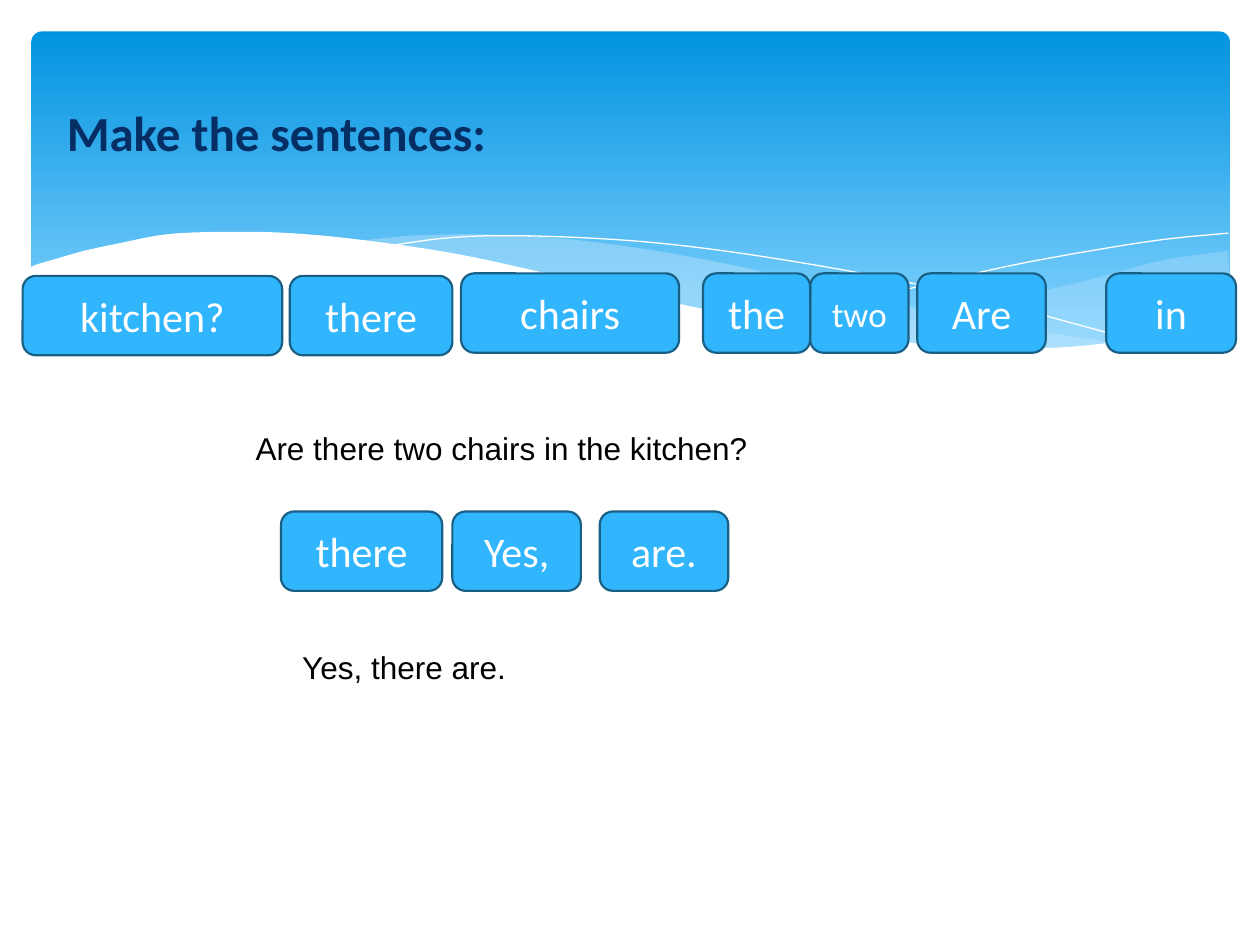
from lxml.etree import SubElement
from pptx import Presentation
from pptx.dml.color import RGBColor
from pptx.enum.shapes import MSO_SHAPE
from pptx.enum.text import MSO_ANCHOR, PP_ALIGN
from pptx.oxml.ns import qn
from pptx.util import Pt

PX = 9144  # EMU per px, 100 px to the inch

WHITE = RGBColor(0xFF, 0xFF, 0xFF)
BLACK = RGBColor(0x00, 0x00, 0x00)
NAVY = RGBColor(0x05, 0x2E, 0x65)
SKY_TOP = RGBColor(0x02, 0x93, 0xE0)
SKY_BOTTOM = RGBColor(0x83, 0xD3, 0xFE)
MIST = RGBColor(0xC6, 0xE7, 0xFC)
CARD_FILL = RGBColor(0x31, 0xB6, 0xFD)
CARD_LINE = RGBColor(0x19, 0x5F, 0x84)

CARD_HEIGHT = 63

# Waves as points relative to the banner's corner
RIGHT_RIBBON_TOP = [(950, 174), (896, 182), (836, 198), (754, 217), (704, 228), (636, 240)]
RIGHT_RIBBON_BOTTOM = [(636, 240), (693, 247), (756, 252), (810, 252), (856, 249),
                       (896, 240), (951, 222)]
LEFT_RIBBON_TOP = [(261, 166), (303, 162), (355, 161), (417, 164), (489, 173), (559, 186),
                   (604, 197), (681, 215), (782, 235), (868, 248)]
LEFT_RIBBON_BOTTOM = [(868, 248), (813, 253), (748, 252), (684, 247), (609, 236),
                      (541, 223), (466, 207), (424, 197), (358, 182), (298, 171), (261, 166)]
LONG_HAIRLINE = [(284, 170), (328, 164), (376, 162), (444, 164), (508, 169), (583, 179),
                 (670, 194), (735, 208), (806, 226), (882, 247)]
SHORT_HAIRLINE = [(588, 232), (647, 216), (723, 198), (781, 185), (841, 174), (899, 165),
                  (950, 160)]
FRONT_WAVE = [(952, 221), (885, 242), (812, 251), (736, 250), (663, 243), (578, 229),
              (504, 214), (422, 195), (340, 177), (267, 166), (205, 160), (152, 159),
              (107, 161), (70, 168), (42, 174), (21, 180), (4, 185), (-2, 188)]
FRONT_WAVE_FLOOR = [(-2, 304), (952, 304)]


def smooth(points, steps=6):
    """Sample a Catmull-Rom curve through the points."""
    padded = [points[0], *points, points[-1]]
    curve = []
    for p0, p1, p2, p3 in zip(padded, padded[1:], padded[2:], padded[3:]):
        for step in range(steps):
            t = step / steps
            curve.append(tuple(
                b + t * (c - a) / 2 + t**2 * (2 * a - 5 * b + 4 * c - d) / 2
                + t**3 * (3 * b - a - 3 * c + d) / 2
                for a, b, c, d in zip(p0, p1, p2, p3)))
    return curve + [points[-1]]


def add_wave(shapes, left, top, points, color, alpha=100, filled=True):
    emu = [(round((left + x) * PX), round((top + y) * PX)) for x, y in points]
    builder = shapes.build_freeform(*emu[0], scale=1.0)
    builder.add_line_segments(emu[1:], close=filled)
    wave = builder.convert_to_shape()
    wave.shadow.inherit = False
    if not filled:
        wave.fill.background()
        wave.line.color.rgb = color
        wave.line.width = 0
        return
    wave.fill.solid()
    wave.fill.fore_color.rgb = color
    wave.line.fill.background()
    if alpha < 100:
        srgb = wave.fill._xPr.find(qn("a:solidFill")).find(qn("a:srgbClr"))
        SubElement(srgb, qn("a:alpha"), val=str(alpha * 1000))


def add_banner(shapes, left, top, width, height):
    sky = shapes.add_shape(MSO_SHAPE.ROUNDED_RECTANGLE,
                           left * PX, top * PX, width * PX, height * PX)
    sky.adjustments[0] = 0.03
    sky.shadow.inherit = False
    sky.line.fill.background()
    sky.fill.gradient()
    sky.fill.gradient_angle = 270
    for stop, color, position in zip(sky.fill.gradient_stops, (SKY_TOP, SKY_BOTTOM), (0, 0.9)):
        stop.color.rgb = color
        stop.position = position

    # Translucent ribbons, hairlines, then the white wave in front
    add_wave(shapes, left, top, smooth(RIGHT_RIBBON_TOP) + smooth(RIGHT_RIBBON_BOTTOM), MIST, 29)
    add_wave(shapes, left, top, smooth(LEFT_RIBBON_TOP) + smooth(LEFT_RIBBON_BOTTOM), MIST, 40)
    for hairline in (LONG_HAIRLINE, SHORT_HAIRLINE):
        add_wave(shapes, left, top, smooth(hairline), WHITE, filled=False)
    add_wave(shapes, left, top, smooth(FRONT_WAVE) + FRONT_WAVE_FLOOR, WHITE)


def place_title(slide, left, top, width, height):
    title = slide.shapes.title
    title.left, title.top, title.width, title.height = (
        length * PX for length in (left, top, width, height))
    title.text_frame.text = "Make the sentences:"
    title.text_frame.word_wrap = False
    title.text_frame.vertical_anchor = MSO_ANCHOR.TOP
    heading = title.text_frame.paragraphs[0]
    heading.alignment = PP_ALIGN.LEFT
    heading.font.name, heading.font.size = "Calibri", Pt(28)
    heading.font.bold = True
    heading.font.color.rgb = NAVY
    # Bring the title in front of the banner
    slide.shapes._spTree.append(title._element)


def add_word_cards(shapes, left, top, cards):
    """Each card is (word, x, y, width, font size), relative to the row's corner."""
    for word, x, y, width, size in cards:
        card = shapes.add_shape(MSO_SHAPE.ROUNDED_RECTANGLE, (left + x) * PX, (top + y) * PX,
                                width * PX, CARD_HEIGHT * PX)
        card.shadow.inherit = False
        card.fill.solid()
        card.fill.fore_color.rgb = CARD_FILL
        card.line.color.rgb = CARD_LINE
        card.line.width = Pt(1.25)
        card.text_frame.text = word
        card.text_frame.vertical_anchor = MSO_ANCHOR.MIDDLE
        label = card.text_frame.paragraphs[0]
        label.alignment = PP_ALIGN.CENTER
        label.font.name, label.font.size = "Calibri", Pt(size)
        label.font.color.rgb = WHITE


def add_answer(shapes, left, top, width, height, sentence):
    answer = shapes.add_textbox(left * PX, top * PX, width * PX, height * PX)
    answer.text_frame.word_wrap = True
    answer.text_frame.text = sentence
    line = answer.text_frame.paragraphs[0]
    line.font.name, line.font.size = "Arial", Pt(18)
    line.font.color.rgb = BLACK


def main():
    deck = Presentation()
    deck.slide_width, deck.slide_height = 1000 * PX, 750 * PX
    slide = deck.slides.add_slide(deck.slide_layouts[5])  # title only
    shapes = slide.shapes

    add_banner(shapes, 25, 25, 951, 270)
    place_title(slide, 43, 76, 362, 57)

    # Question
    add_word_cards(shapes, 18, 217, [
        ("kitchen?", 0, 2, 206, 24), ("there", 212, 2, 129, 24), ("chairs", 348, 0, 173, 24),
        ("two", 625, 0, 78, 20), ("the", 540, 0, 85, 24), ("Are", 710, 0, 102, 24),
        ("in", 860, 0, 103, 24)])
    add_answer(shapes, 193, 336, 614, 40, "Are there two chairs in the kitchen?")

    # Reply
    add_word_cards(shapes, 223, 406, [
        ("there", 0, 0, 128, 24), ("Yes,", 136, 0, 102, 24), ("are.", 253, 0, 102, 24)])
    add_answer(shapes, 230, 509, 328, 40, "Yes, there are.")

    deck.save("out.pptx")


if __name__ == "__main__":
    main()
